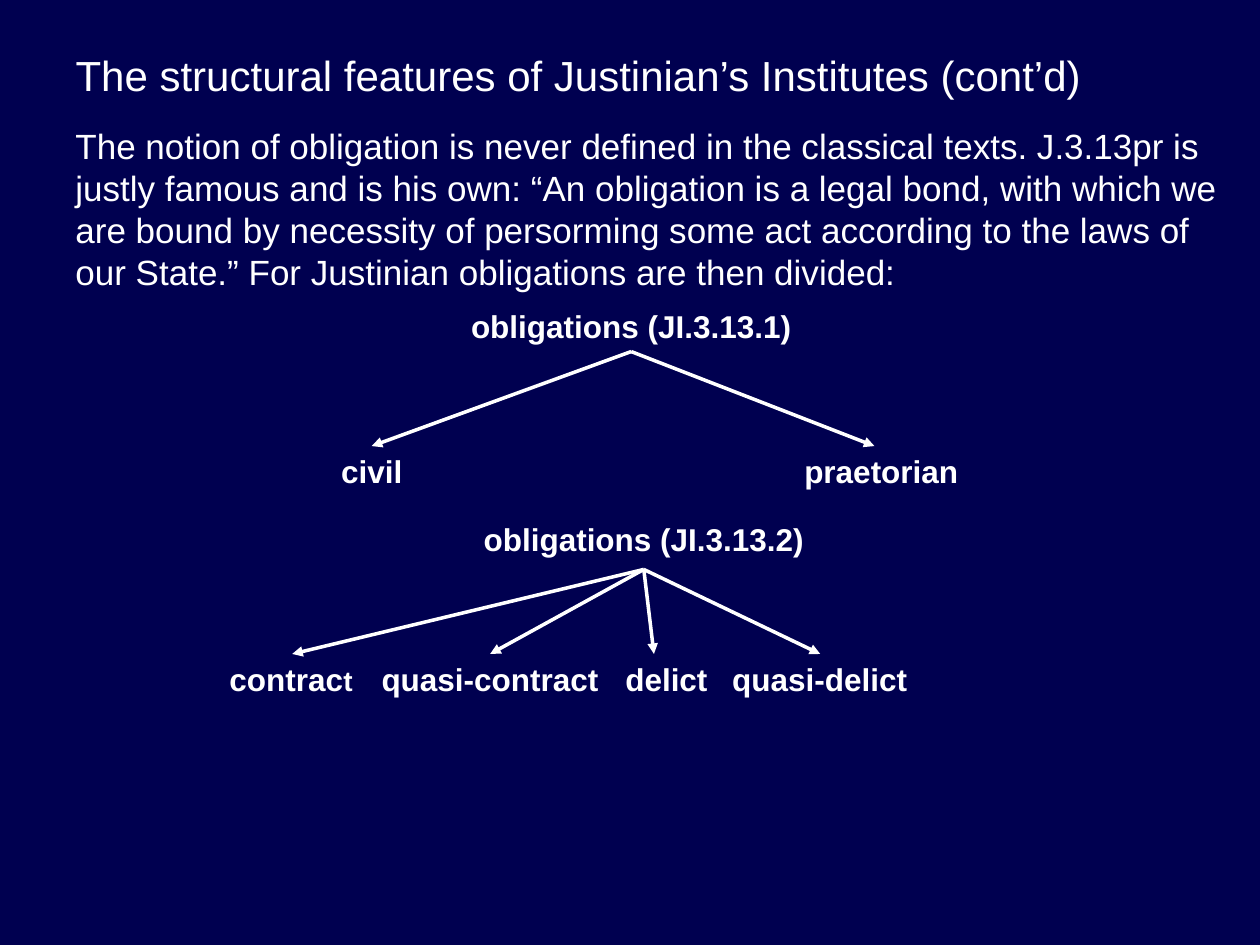
"""Builds the slide on how Justinian's Institutes divide obligations."""
import dataclasses

import lxml.etree
import pptx
import pptx.dml.color
import pptx.enum.shapes
import pptx.enum.text
import pptx.oxml.ns
import pptx.util

Pt = pptx.util.Pt
RGB = pptx.dml.color.RGBColor
Align = pptx.enum.text.PP_ALIGN
Anchor = pptx.enum.text.MSO_ANCHOR


@dataclasses.dataclass(frozen=True)
class Theme:
    font: str = "Arial"
    ground: RGB = RGB(0x00, 0x00, 0x50)
    ink: RGB = RGB(0xFF, 0xFF, 0xFF)
    title_size: int = 24
    body_size: int = 20
    label_size: int = 18
    small_size: int = 16
    line_width: int = 2
    label_height: float = 29


class ObligationSlide:
    def __init__(self, deck, theme):
        self.theme = theme
        self.slide = deck.slides.add_slide(deck.slide_layouts[5])
        background = self.slide.background.fill
        background.solid()
        background.fore_color.rgb = theme.ground

    def set_runs(self, frame, runs, align, anchor, bold=False, wrap=True):
        frame.word_wrap = wrap
        frame.auto_size = pptx.enum.text.MSO_AUTO_SIZE.NONE
        frame.vertical_anchor = anchor
        paragraph = frame.paragraphs[0]
        paragraph.alignment = align
        for wording, size in runs:
            run = paragraph.add_run()
            run.text = wording
            run.font.name = self.theme.font
            run.font.size = Pt(size)
            run.font.bold = bold
            run.font.color.rgb = self.theme.ink

    def title(self, wording, left, top, width, height):
        heading = self.slide.shapes.title
        heading.left, heading.top = Pt(left), Pt(top)
        heading.width, heading.height = Pt(width), Pt(height)
        self.set_runs(heading.text_frame, [(wording, self.theme.title_size)],
                      Align.LEFT, Anchor.MIDDLE)

    def body(self, wording, left, top, width, height):
        passage = self.slide.shapes.add_textbox(Pt(left), Pt(top), Pt(width), Pt(height))
        self.set_runs(passage.text_frame, [(wording, self.theme.body_size)],
                      Align.LEFT, Anchor.TOP)

    def label(self, runs, left, top, width):
        term = self.slide.shapes.add_textbox(
            Pt(left), Pt(top), Pt(width), Pt(self.theme.label_height))
        self.set_runs(term.text_frame, runs, Align.CENTER, Anchor.TOP, bold=True, wrap=False)

    def arrow(self, tip, origin):
        branch = self.slide.shapes.add_connector(
            pptx.enum.shapes.MSO_CONNECTOR.STRAIGHT, *map(Pt, tip + origin))
        branch.line.color.rgb = self.theme.ink
        branch.line.width = Pt(self.theme.line_width)
        qn = pptx.oxml.ns.qn
        properties = branch.element.spPr
        lxml.etree.SubElement(properties.find(qn("a:ln")), qn("a:headEnd"), type="triangle")
        lxml.etree.SubElement(properties, qn("a:effectLst"))

    def tree(self, root, left, top, origin_y, kinds_y, kinds, width=208.8):
        self.label([(root, self.theme.label_size)], left, top, width)
        for runs, kind_left, kind_width, tip_x in kinds:
            self.arrow((tip_x, kinds_y), (left + width / 2, origin_y))
            self.label(runs, kind_left, kinds_y, kind_width)


def main():
    theme = Theme()
    size = theme.label_size
    deck = pptx.Presentation()
    deck.slide_width, deck.slide_height = Pt(720), Pt(540)
    page = ObligationSlide(deck, theme)
    page.title("The structural features of Justinian’s Institutes (cont’d)", 36, 24.5, 684, 36)
    page.body(
        "The notion of obligation is never defined in the classical texts. J.3.13pr is "
        "justly famous and is his own: “An obligation is a legal bond, with which we are "
        "bound by necessity of persorming some act according to the laws of our State.” "
        "For Justinian obligations are then divided:", 36, 67.7, 671, 104.4)
    page.tree("obligations (JI.3.13.1)", 256.3, 172, 200.9, 254.9, [
        ([("civil", size)], 103.7, 217.4, 212.4),
        ([("praetorian", size)], 404.6, 198, 499.7),
    ])
    page.tree("obligations (JI.3.13.2)", 263.5, 293.8, 325.4, 373.7, [
        ([("contrac", size), ("t", theme.small_size)], 123.1, 86.4, 167),
        ([("quasi-contract", size)], 210.2, 139.7, 280.1),
        ([("delict", size)], 349.9, 61.9, 373.7),
        ([("quasi-delict", size)], 401.8, 133.2, 468.7),
    ])
    deck.save("out.pptx")


if __name__ == "__main__":
    main()
